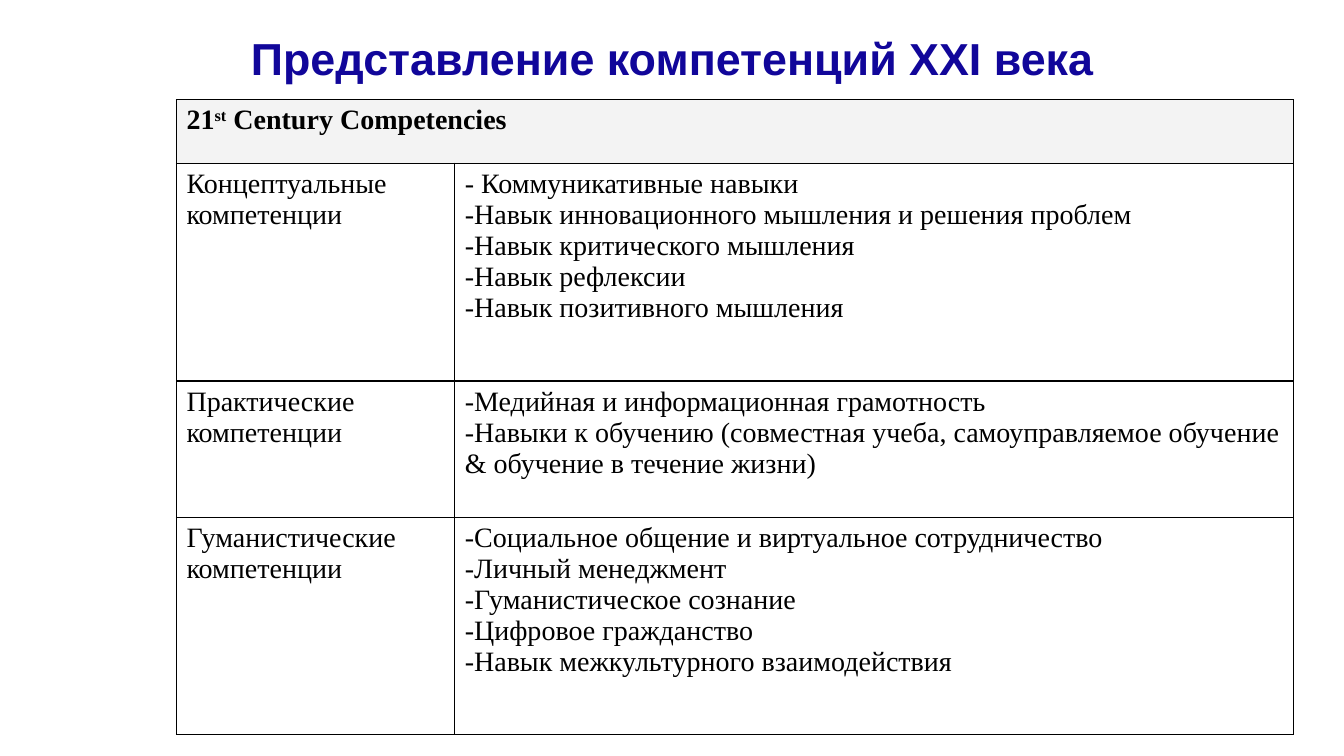
from lxml.etree import SubElement as Sub
from pptx import Presentation
from pptx.dml.color import RGBColor as Rgb
from pptx.enum.text import MSO_ANCHOR as Anchor, PP_ALIGN as Align
from pptx.oxml.ns import qn
from pptx.util import Inches, Pt

TITLE = "Представление компетенций XXI века"
HEAD = [("21", 0), ("st", 30000), (" Century Competencies", 0)]
ROWS = [
    ("Концептуальные компетенции", [
        " Коммуникативные навыки",
        "Навык инновационного мышления и решения проблем",
        "Навык критического мышления",
        "Навык рефлексии",
        "Навык позитивного мышления",
    ]),
    ("Практические компетенции", [
        "Медийная и информационная грамотность",
        "Навыки к обучению (совместная учеба, самоуправляемое обучение"
        " & обучение в течение жизни)",
    ]),
    ("Гуманистические компетенции", [
        "Социальное общение и виртуальное сотрудничество",
        "Личный менеджмент",
        "Гуманистическое сознание",
        "Цифровое гражданство",
        "Навык межкультурного взаимодействия",
    ]),
]
COLORS = {"title": "11069A", "text": "000000", "head": "F3F3F3", "line": "000000"}
FONTS = {
    "title": {"name": "Arial", "size": Pt(32), "bold": True},
    "head": {"name": "Times New Roman", "size": Pt(20), "bold": True},
    "text": {"name": "Times New Roman", "size": Pt(20), "bold": False},
}
WIDE, HIGH = 13.33, 7.5
COLS = [2.76, 8.32]
TALL = [0.63, 2.16, 1.35, 2.16]


def write(para, text, kind, color="text"):
    run = para.add_run()
    run.text = text
    for key, val in FONTS[kind].items():
        setattr(run.font, key, val)
    run.font.color.rgb = Rgb.from_string(COLORS[color])
    return run


def dash(para):
    props = para._p.get_or_add_pPr()
    props.set("marL", "0")
    props.set("indent", "0")
    Sub(props, qn("a:buFont"), typeface="Times New Roman")
    Sub(props, qn("a:buChar"), char="-")
    tabs = Sub(props, qn("a:tabLst"))
    Sub(tabs, qn("a:tab"), pos=str(Inches(0.25)), algn="l")


def edge(cell):
    props = cell._tc.get_or_add_tcPr()
    for side in "LRTB":
        line = Sub(props, qn("a:ln" + side), w=str(Pt(1)))
        fill = Sub(line, qn("a:solidFill"))
        Sub(fill, qn("a:srgbClr"), val=COLORS["line"])


deck = Presentation()
deck.slide_width, deck.slide_height = Inches(WIDE), Inches(HIGH)
slide = deck.slides.add_slide(deck.slide_layouts[6])

box = slide.shapes.add_textbox(Inches(2.17), Inches(0.21), Inches(9), Inches(0.79))
frame = box.text_frame
frame.word_wrap = True
frame.vertical_anchor = Anchor.MIDDLE
para = frame.paragraphs[0]
para.alignment, para.line_spacing = Align.CENTER, 0.9
write(para, TITLE, "title", "title")

grid = slide.shapes.add_table(
    len(TALL), len(COLS), Inches(1.75), Inches(0.99),
    Inches(sum(COLS)), Inches(sum(TALL))).table
grid.first_row = grid.horz_banding = False
for col, size in zip(grid.columns, COLS):
    col.width = Inches(size)
for row, size in zip(grid.rows, TALL):
    row.height = Inches(size)
for cell in grid.iter_cells():
    edge(cell)
    cell.fill.background()

top = grid.cell(0, 0)
top.merge(grid.cell(0, 1))
top.fill.solid()
top.fill.fore_color.rgb = Rgb.from_string(COLORS["head"])
para = top.text_frame.paragraphs[0]
props = para._p.get_or_add_pPr()
props.set("marL", str(Inches(0.38)))
props.set("indent", str(-Inches(0.38)))
for text, lift in HEAD:
    run = write(para, text, "head")
    if lift:
        run._r.get_or_add_rPr().set("baseline", str(lift))

for num, (name, skills) in enumerate(ROWS, 1):
    write(grid.cell(num, 0).text_frame.paragraphs[0], name, "text")
    frame = grid.cell(num, 1).text_frame
    for pos, skill in enumerate(skills):
        para = frame.add_paragraph() if pos else frame.paragraphs[0]
        dash(para)
        write(para, skill, "text")

deck.save("out.pptx")
